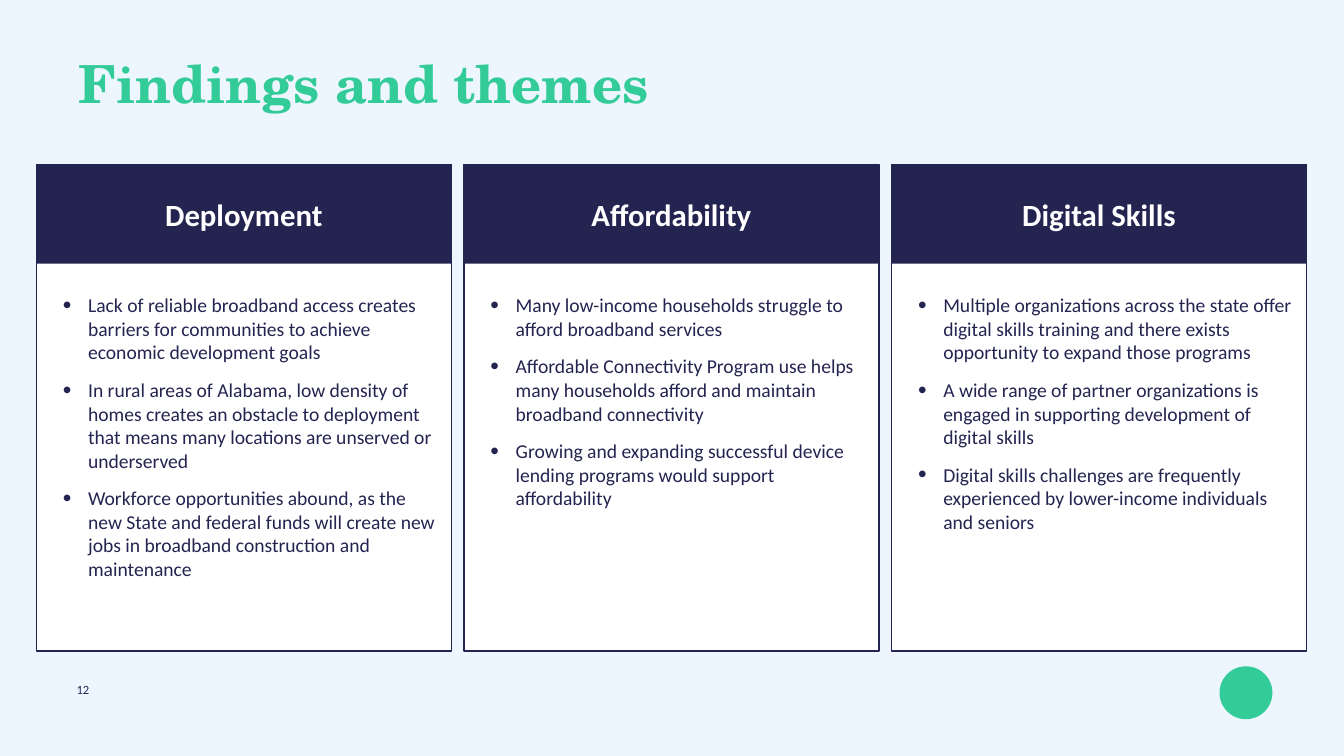
"""Build the findings and themes slide with three columns of findings."""
import pptx
import pptx.dml.color
import pptx.enum.shapes
import pptx.enum.text
import pptx.oxml.ns
import pptx.util
from lxml import etree
from pptx.util import Inches

COLORS = {"background": "EDF5FF", "green": "33CC99", "navy": "242451", "white": "FFFFFF"}
SHAPES = pptx.enum.shapes.MSO_SHAPE


def rgb(name):
    return pptx.dml.color.RGBColor.from_string(COLORS[name])


def write(text_frame, paragraphs, size, color="navy", font="Calibri", bold=False,
          align=pptx.enum.text.PP_ALIGN.LEFT, spacing=None, gap=0, bullets=False):
    text_frame.word_wrap = True
    for index, text in enumerate(paragraphs):
        paragraph = text_frame.paragraphs[0] if index == 0 else text_frame.add_paragraph()
        paragraph.alignment = align
        if spacing:
            paragraph.line_spacing = spacing
        if index:
            paragraph.space_before = pptx.util.Pt(gap)
        if bullets:
            properties = paragraph._p.get_or_add_pPr()
            properties.set("marL", str(Inches(0.5)))
            properties.set("indent", str(Inches(-0.5)))
            for tag, name, value in (("a:buSzPct", "val", "125000"),
                                     ("a:buFont", "typeface", "Arial"),
                                     ("a:buChar", "char", "•")):
                etree.SubElement(properties, pptx.oxml.ns.qn(tag)).set(name, value)
        run = paragraph.add_run()
        run.text = text
        run.font.name = font
        run.font.size = pptx.util.Pt(size)
        run.font.bold = bold
        run.font.color.rgb = rgb(color)


presentation = pptx.Presentation()
presentation.slide_width = Inches(26.67)
presentation.slide_height = Inches(15)
slide = presentation.slides.add_slide(presentation.slide_layouts[6])
slide.background.fill.solid()
slide.background.fill.fore_color.rgb = rgb("background")

circle = slide.shapes.add_shape(SHAPES.OVAL, Inches(24.2), Inches(13.22), Inches(1.05), Inches(1.05))
circle.shadow.inherit = False
circle.fill.solid()
circle.fill.fore_color.rgb = rgb("green")
circle.line.fill.background()

page_number = slide.shapes.add_textbox(Inches(1.42), Inches(13.52), Inches(19.18), Inches(0.37))
write(page_number.text_frame, ["12"], 18, spacing=0.9)

title = slide.shapes.add_textbox(Inches(1.45), Inches(1.11), Inches(23.76), Inches(1.24))
write(title.text_frame, ["Findings and themes"], 75, color="green",
      font="TeX Gyre Schola", bold=True, spacing=0.9)

findings = {
    "Deployment": [
        "Lack of reliable broadband access creates barriers for communities to achieve "
        "economic development goals",
        "In rural areas of Alabama, low density of homes creates an obstacle to deployment "
        "that means many locations are unserved or underserved",
        "Workforce opportunities abound, as the new State and federal funds will create new "
        "jobs in broadband construction and maintenance",
    ],
    "Affordability": [
        "Many low-income households struggle to afford broadband services",
        "Affordable Connectivity Program use helps many households afford and maintain "
        "broadband connectivity",
        "Growing and expanding successful device lending programs would support affordability",
    ],
    "Digital Skills": [
        "Multiple organizations across the state offer digital skills training and there "
        "exists opportunity to expand those programs",
        "A wide range of partner organizations is engaged in supporting development of "
        "digital skills",
        "Digital skills challenges are frequently experienced by lower-income individuals "
        "and seniors",
    ],
}

column_top, column_width = Inches(3.26), Inches(8.24)
for column, (heading, points) in enumerate(findings.items()):
    left = Inches(0.72 + 8.485 * column)

    card = slide.shapes.add_shape(SHAPES.RECTANGLE, left, column_top, column_width, Inches(9.66))
    card.shadow.inherit = False
    card.fill.solid()
    card.fill.fore_color.rgb = rgb("white")
    card.line.color.rgb = rgb("navy")
    card.line.width = pptx.util.Pt(2)

    header = slide.shapes.add_shape(SHAPES.RECTANGLE, left, column_top, column_width, Inches(1.97))
    header.shadow.inherit = False
    header.fill.solid()
    header.fill.fore_color.rgb = rgb("navy")
    header.line.fill.background()
    header.text_frame.margin_left = header.text_frame.margin_right = Inches(0.5)
    header.text_frame.margin_top = header.text_frame.margin_bottom = Inches(0.1)
    header.text_frame.vertical_anchor = pptx.enum.text.MSO_ANCHOR.MIDDLE
    write(header.text_frame, [heading], 44, color="white", bold=True,
          align=pptx.enum.text.PP_ALIGN.CENTER)

    body = slide.shapes.add_textbox(left + Inches(0.43), Inches(5.77), Inches(7.66), Inches(6.31))
    write(body.text_frame, points, 28, gap=20, bullets=True)

presentation.save("out.pptx")
